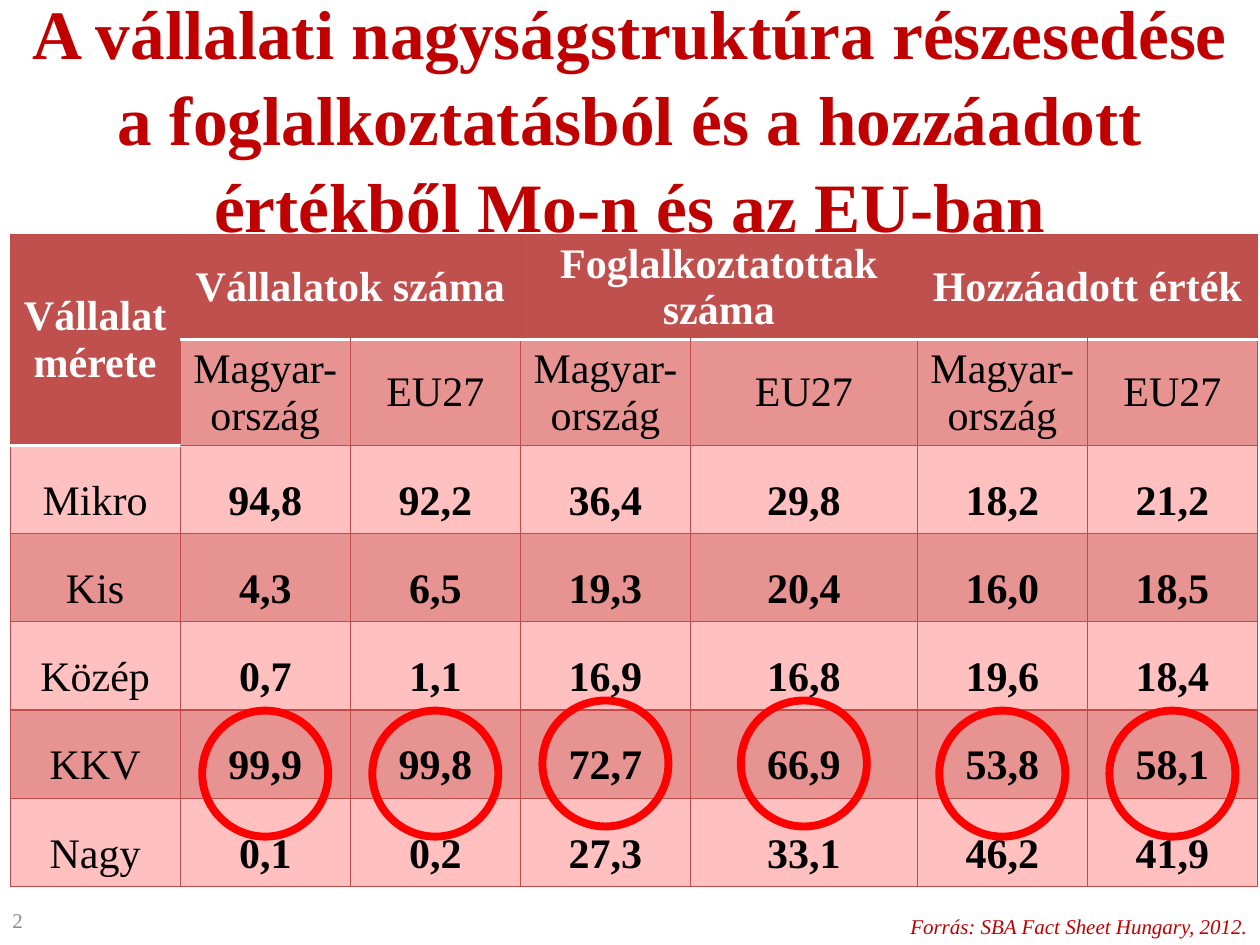
"""Builds a slide comparing company size classes in Hungary and the EU."""
import lxml.etree
import pptx
import pptx.dml.color
import pptx.enum.shapes
import pptx.enum.text
import pptx.oxml.ns
import pptx.util

Inches = pptx.util.Inches
Pt = pptx.util.Pt
MIDDLE = pptx.enum.text.MSO_ANCHOR.MIDDLE
ALIGN = pptx.enum.text.PP_ALIGN


def rgb(color):
    return pptx.dml.color.RGBColor.from_string(color)


def write(frame, text, size=24, color="000000", bold=False, italic=False,
          align=ALIGN.CENTER, spacing=None, wrap=True):
    frame.word_wrap = wrap
    paragraph = frame.paragraphs[0]
    paragraph.alignment = align
    if spacing:
        paragraph.line_spacing = spacing
    run = paragraph.add_run()
    run.text = text
    run.font.name = "Times New Roman"
    run.font.size = Pt(size)
    run.font.bold = bold
    run.font.italic = italic
    run.font.color.rgb = rgb(color)


presentation = pptx.Presentation()
presentation.slide_width = Inches(10)
presentation.slide_height = Inches(7.5)
slide = presentation.slides.add_slide(presentation.slide_layouts[6])
shapes = slide.shapes

rows = [
    ["Vállalat mérete", "Vállalatok száma", "", "Foglalkoztatottak száma", "", "Hozzáadott érték", ""],
    [""] + ["Magyar-ország", "EU27"] * 3,
    ["Mikro", "94,8", "92,2", "36,4", "29,8", "18,2", "21,2"],
    ["Kis", "4,3", "6,5", "19,3", "20,4", "16,0", "18,5"],
    ["Közép", "0,7", "1,1", "16,9", "16,8", "19,6", "18,4"],
    ["KKV", "99,9", "99,8", "72,7", "66,9", "53,8", "58,1"],
    ["Nagy", "0,1", "0,2", "27,3", "33,1", "46,2", "41,9"],
]
widths = [1.35, 1.35, 1.35, 1.35, 1.8, 1.35, 1.35]
table_left = 0.08
row_height = 0.7

table = shapes.add_table(
    len(rows), len(widths), Inches(table_left), Inches(1.86),
    Inches(sum(widths)), Inches(row_height * len(rows))).table
for column, width in zip(table.columns, widths):
    column.width = Inches(width)
for row in table.rows:
    row.height = Inches(row_height)
table.cell(0, 0).merge(table.cell(1, 0))
for first in (1, 3, 5):
    table.cell(0, first).merge(table.cell(0, first + 1))

for r, texts in enumerate(rows):
    for c, text in enumerate(texts):
        cell = table.cell(r, c)
        header = r == 0 or (r == 1 and c == 0)
        body = r >= 2
        header_rows = 2 if c == 0 else 1
        cell.vertical_anchor = MIDDLE
        cell.fill.solid()
        cell.fill.fore_color.rgb = rgb("C0504D" if header else "E69391" if r % 2 else "FFC0BF")
        if body:
            cell.margin_left = cell.margin_right = cell.margin_top = cell.margin_bottom = 0
        if text:
            write(cell.text_frame, text, color="FFFFFF" if header else "000000",
                  bold=header or (body and c > 0), spacing=1.5 if body else None)
        white_sides = {"T": r == header_rows, "B": r == header_rows - 1 or (r == 0 and c == 0)}
        properties = cell._tc.get_or_add_tcPr()
        for position, side in enumerate("LRTB"):
            white = white_sides.get(side, False)
            border = lxml.etree.Element(pptx.oxml.ns.qn(f"a:ln{side}"), w=str(Pt(2 if white else 0.75)))
            fill = lxml.etree.SubElement(border, pptx.oxml.ns.qn("a:solidFill"))
            lxml.etree.SubElement(fill, pptx.oxml.ns.qn("a:srgbClr"), val="FFFFFF" if white else "BF4C48")
            properties.insert(position, border)

citation = shapes.add_textbox(Inches(7.09), Inches(7.2), Inches(2.91), Inches(0.3))
citation.fill.solid()
citation.fill.fore_color.rgb = rgb("FFFFFF")
citation.text_frame.vertical_anchor = MIDDLE
write(citation.text_frame, "Forrás: SBA Fact Sheet Hungary, 2012.", size=12,
      color="C00000", italic=True, align=ALIGN.RIGHT, wrap=False)

title = shapes.add_textbox(0, Inches(0.3), Inches(10), Inches(1.25))
title.text_frame.vertical_anchor = MIDDLE
write(title.text_frame,
      "A vállalati nagyságstruktúra részesedése a foglalkoztatásból és a hozzáadott értékből Mo-n és az EU-ban",
      size=39.6, color="C00000", bold=True, spacing=1.04)

page_number = shapes.add_textbox(0, Inches(7.1), Inches(2.33), Inches(0.4))
page_number.text_frame.vertical_anchor = MIDDLE
write(page_number.text_frame, "2", size=12, color="8C8C8C", align=ALIGN.LEFT)

for c in range(1, len(widths)):
    center = table_left + sum(widths[:c]) + widths[c] / 2
    top = 5.56 if c in (3, 4) else 5.64
    ring = shapes.add_shape(pptx.enum.shapes.MSO_SHAPE.OVAL,
                            Inches(center - 0.5), Inches(top), Inches(1), Inches(1))
    ring.shadow.inherit = False
    ring.fill.background()
    ring.line.color.rgb = rgb("FF0000")
    ring.line.width = Pt(4.5)

presentation.save("out.pptx")
